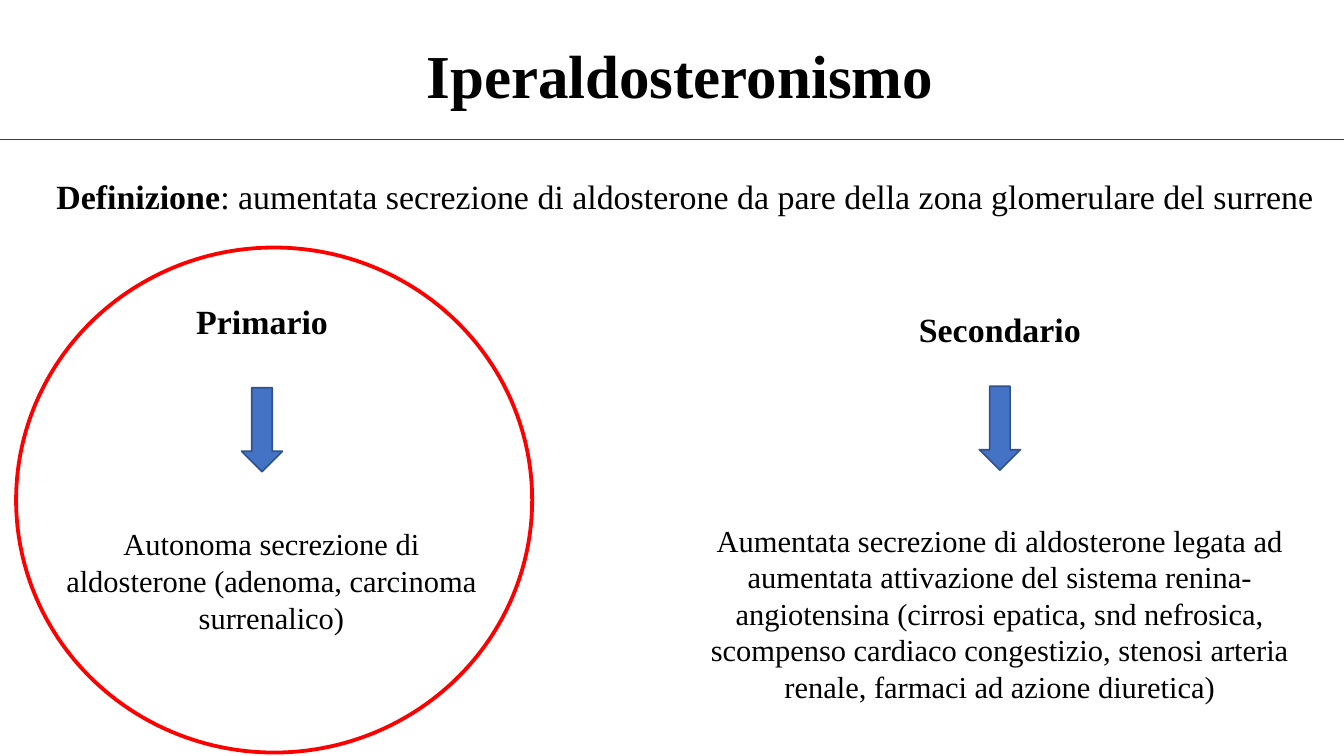
import pptx
import pptx.dml.color
import pptx.enum.shapes
import pptx.enum.text
import pptx.oxml.ns
import pptx.util
from lxml import etree

RGBColor = pptx.dml.color.RGBColor
BLACK = RGBColor(0, 0, 0)
RULE_GRAY = RGBColor(0x40, 0x40, 0x40)
RED = RGBColor(0xFF, 0, 0)
ARROW_FILL = RGBColor(0x44, 0x72, 0xC4)
ARROW_LINE = RGBColor(0x2F, 0x52, 0x8F)

FONT = "Times New Roman"
W, H = pptx.util.Inches(11.02), pptx.util.Inches(6.2)
SHAPES = pptx.enum.shapes.MSO_SHAPE


def area(center, top, width, height):
    """Turn percentages of the slide, from a horizontal centre, into a box."""
    return (int(W * (center - width / 2) / 100), int(H * top / 100),
            int(W * width / 100), int(H * height / 100))


def write(sp, text, size=18, bold=False, lead=""):
    """Fill a shape with centred text, after an optional bold lead."""
    tf = sp.text_frame
    tf.word_wrap = True
    tf.auto_size = pptx.enum.text.MSO_AUTO_SIZE.NONE
    tf.vertical_anchor = pptx.enum.text.MSO_ANCHOR.TOP
    p = tf.paragraphs[0]
    p.alignment = pptx.enum.text.PP_ALIGN.CENTER
    p.line_spacing = 1.0
    for content, heavy in ((lead, True), (text, bold)):
        if content:
            r = p.add_run()
            r.text = content
            r.font.name = FONT
            r.font.size = pptx.util.Pt(size)
            r.font.bold = heavy
            r.font.color.rgb = BLACK


def add_title(s, text, box):
    sp = s.shapes.title
    sp.left, sp.top, sp.width, sp.height = box
    write(sp, text, size=36, bold=True)


def add_text(s, text, box, **style):
    write(s.shapes.add_textbox(*box), text, **style)


def add_outline(s, kind, box, color, weight, fill=None):
    sp = s.shapes.add_shape(kind, *box)
    sp.shadow.inherit = False
    sp.line.color.rgb = color
    sp.line.width = pptx.util.Pt(weight)
    if fill is None:
        sp.fill.background()
    else:
        sp.fill.solid()
        sp.fill.fore_color.rgb = fill


def add_rule(s, top):
    y = int(H * top / 100)
    line = s.shapes.add_connector(
        pptx.enum.shapes.MSO_CONNECTOR.STRAIGHT, 0, y, W, y)
    line.line.color.rgb = RULE_GRAY
    line.line.width = pptx.util.Pt(0.5)
    etree.SubElement(line._element.spPr, pptx.oxml.ns.qn("a:effectLst"))


def add_form(s, center, heading, heading_top, arrow_top, body, body_box):
    """Stack a heading, a down arrow and a description."""
    add_text(s, heading, area(center, heading_top, 16, 7), size=20, bold=True)
    add_outline(s, SHAPES.DOWN_ARROW, area(center, arrow_top, 3.05, 11.1),
                ARROW_LINE, 1, ARROW_FILL)
    add_text(s, body, body_box)


def main():
    prs = pptx.Presentation()
    prs.slide_width, prs.slide_height = W, H
    s = prs.slides.add_slide(prs.slide_layouts[5])

    add_rule(s, 18.4)
    add_title(s, "Iperaldosteronismo", area(50.6, 4.2, 98.8, 11))
    add_text(s, ": aumentata secrezione di aldosterone da pare della zona "
             "glomerulare del surrene", area(51, 22.4, 98, 6.8),
             size=20, lead="Definizione")
    add_form(s, 19.5, "Primario", 39, 51.3,
             "Autonoma secrezione di aldosterone (adenoma, carcinoma "
             "surrenalico)", area(20.2, 68.7, 33.2, 16.3))
    add_form(s, 74.4, "Secondario", 40, 51.1,
             "Aumentata secrezione di aldosterone legata ad aumentata "
             "attivazione del sistema renina-angiotensina (cirrosi epatica, "
             "snd nefrosica, scompenso cardiaco congestizio, stenosi arteria "
             "renale, farmaci ad azione diuretica)",
             area(74.4, 68.2, 48.5, 26.1))
    add_outline(s, SHAPES.OVAL, area(20.4, 32.75, 38.4, 66.8), RED, 2.25)

    prs.save("out.pptx")


if __name__ == "__main__":
    main()
